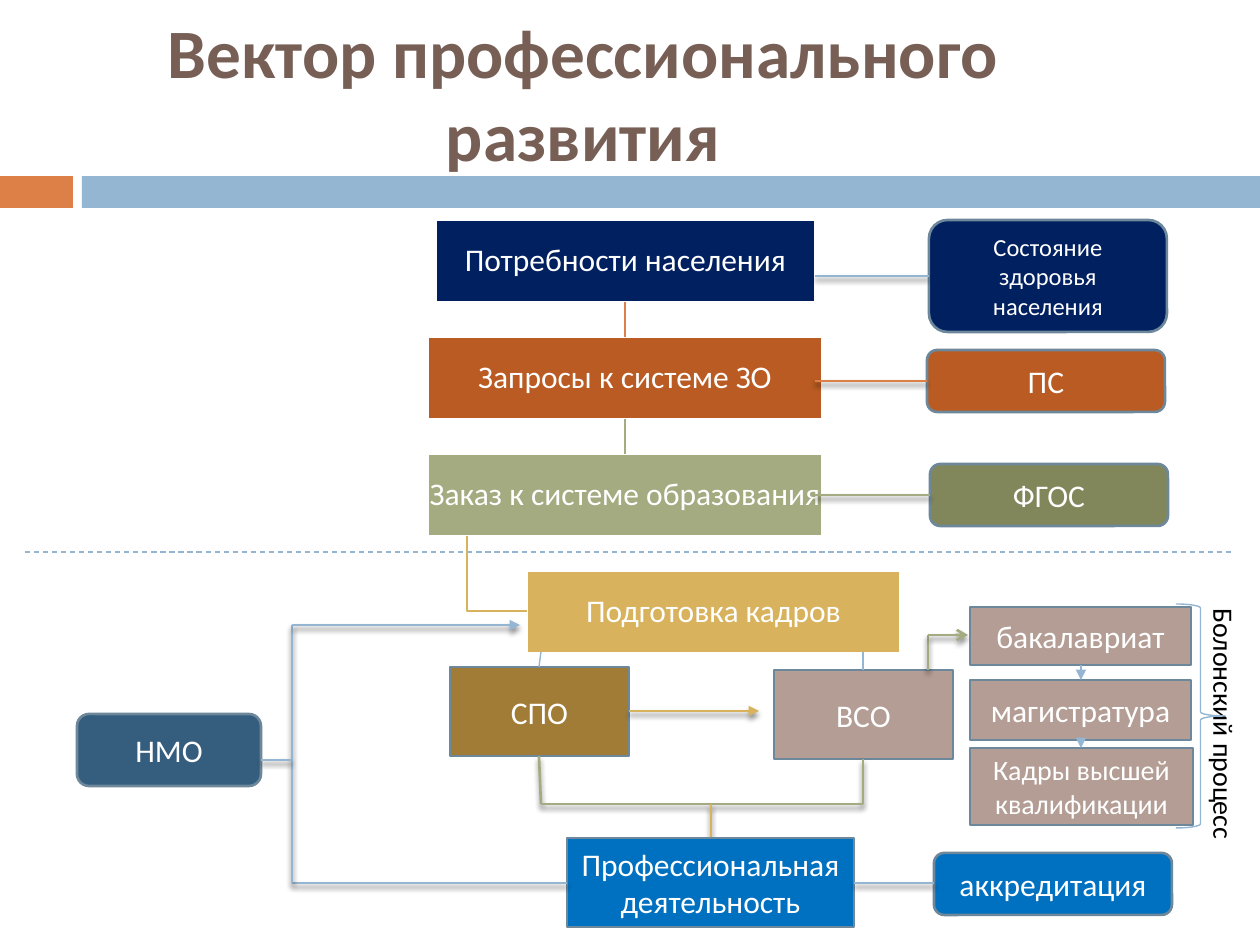
from dataclasses import dataclass

from pptx import Presentation
from pptx.dml.color import RGBColor
from pptx.enum.dml import MSO_LINE
from pptx.enum.shapes import MSO_CONNECTOR, MSO_SHAPE
from pptx.enum.text import MSO_ANCHOR, PP_ALIGN
from pptx.oxml.ns import qn
from pptx.oxml.xmlchemy import OxmlElement
from pptx.util import Pt

RECT = MSO_SHAPE.RECTANGLE
ROUNDED = MSO_SHAPE.ROUNDED_RECTANGLE
BRACE = MSO_SHAPE.RIGHT_BRACE
STRAIGHT = MSO_CONNECTOR.STRAIGHT
DASH = MSO_LINE.DASH
MIDDLE = MSO_ANCHOR.MIDDLE
CENTER = PP_ALIGN.CENTER

WHITE = RGBColor(0xFF, 0xFF, 0xFF)
BLACK = RGBColor(0x00, 0x00, 0x00)
BROWN = RGBColor(0x77, 0x5F, 0x55)
ORANGE = RGBColor(0xDD, 0x80, 0x47)
RUST = RGBColor(0xB9, 0x5B, 0x22)
SKY = RGBColor(0x94, 0xB6, 0xD2)
NAVY = RGBColor(0x00, 0x20, 0x60)
SAGE = RGBColor(0xA5, 0xAB, 0x81)
OLIVE = RGBColor(0x81, 0x87, 0x5A)
GOLD = RGBColor(0xD8, 0xB2, 0x5C)
BRONZE = RGBColor(0xA1, 0x7C, 0x36)
MAUVE = RGBColor(0xB3, 0x9D, 0x94)
BLUE = RGBColor(0x00, 0x70, 0xC0)
STEEL = RGBColor(0x35, 0x5D, 0x7E)
OUTLINE = RGBColor(0x6D, 0x87, 0x9B)

FONT = "Calibri"
SCALE = 914400 / 126
THIN = 0.79
THICK = 1.5


def px(length):
    return round(length * SCALE)


@dataclass
class Box:
    left: int
    top: int
    width: int
    height: int

    def inside(self, x, y, width, height):
        return Box(self.left + x, self.top + y, width, height)

    def point(self, x, y):
        return px(self.left + x), px(self.top + y)

    def emu(self):
        return [px(side) for side in (self.left, self.top, self.width, self.height)]


def write(shape, text, size=18, color=WHITE, bold=False, wrap=True, inset=None, spacing=None):
    frame = shape.text_frame
    frame.word_wrap = wrap
    frame.vertical_anchor = MIDDLE
    if inset is not None:
        frame.margin_left = frame.margin_right = px(inset)
        frame.margin_top = frame.margin_bottom = px(inset)
    paragraph = frame.paragraphs[0]
    paragraph.alignment = CENTER
    paragraph.line_spacing = spacing
    run = paragraph.add_run()
    run.text = text
    run.font.name = FONT
    run.font.size = Pt(size)
    run.font.bold = bold
    run.font.color.rgb = color


def block(slide, box, fill=None, kind=RECT, line=OUTLINE, weight=THICK, text=None, **text_format):
    shape = slide.shapes.add_shape(kind, *box.emu())
    shape.shadow.inherit = False
    if fill is None:
        shape.fill.background()
    else:
        shape.fill.solid()
        shape.fill.fore_color.rgb = fill
    if line is None:
        shape.line.fill.background()
    else:
        shape.line.color.rgb = line
        shape.line.width = Pt(weight)
    if text:
        write(shape, text, **text_format)


def add_child(parent, tag, **attributes):
    child = OxmlElement(tag)
    for name, value in attributes.items():
        child.set(name, value)
    parent.append(child)
    return child


def link(slide, box, start, end, color=SKY, weight=THICK, head=None, dash=None, shadow=True):
    connector = slide.shapes.add_connector(STRAIGHT, *box.point(*start), *box.point(*end))
    connector.line.color.rgb = color
    connector.line.width = Pt(weight)
    if dash:
        connector.line.dash_style = dash
    properties = connector.element.spPr
    if head:
        add_child(properties.find(qn("a:ln")), "a:tailEnd", type=head)
    effects = add_child(properties, "a:effectLst")
    if shadow:
        cast = add_child(effects, "a:outerShdw", blurRad="38100", dist="30480",
                         dir="5400000", rotWithShape="0")
        shade = add_child(cast, "a:srgbClr", val="000000")
        add_child(shade, "a:alpha", val="45000")


def header(slide, box):
    block(slide, box.inside(0, 176, 73, 32), ORANGE, line=None)
    block(slide, box.inside(82, 176, 1178, 32), SKY, line=None)
    title = slide.shapes.add_textbox(*box.inside(21, 24, 1124, 136).emu())
    write(title, "Вектор профессионального развития", size=39.6, color=BROWN, bold=True)


def stages(slide, box):
    rows = [
        ("Потребности населения", 8, 379, NAVY),
        ("Запросы к системе ЗО", 0, 394, RUST),
        ("Заказ к системе образования", 0, 394, SAGE),
        ("Подготовка кадров", 99, 373, GOLD),
    ]
    pitch, height = 117, 82
    for index, (label, x, width, fill) in enumerate(rows):
        block(slide, box.inside(x, index * pitch, width, height), fill, line=WHITE,
              text=label, wrap=False, inset=1, spacing=0.9)
    for index, color in enumerate((ORANGE, SAGE)):
        link(slide, box, (197, index * pitch + height), (197, (index + 1) * pitch),
             color, shadow=False)
    elbow = slide.shapes.build_freeform(*box.point(39, 2 * pitch + height))
    elbow.add_line_segments([box.point(39, 391), box.point(99, 391)], close=False)
    bend = elbow.convert_to_shape()
    bend.shadow.inherit = False
    bend.fill.background()
    bend.line.color.rgb = GOLD
    bend.line.width = Pt(THICK)


def standards(slide, box):
    rows = [
        ("Состояние здоровья населения", 110, 0, 112, 14, NAVY, SKY, 56, 0),
        ("ПС", 108, 130, 62, 18, RUST, ORANGE, 161, 0),
        ("ФГОС", 111, 244, 62, 18, OLIVE, SAGE, 275, 0),
    ]
    for label, x, y, height, size, fill, color, link_y, link_x in rows:
        block(slide, box.inside(x, y, 238, height), fill, ROUNDED, text=label, size=size)
        link(slide, box, (x, link_y), (link_x - 4, link_y), color)


def training(slide, box):
    block(slide, box.inside(0, 15, 179, 89), BRONZE, text="СПО")
    block(slide, box.inside(324, 18, 179, 89), MAUVE, text="ВСО")
    link(slide, box, (91, 0), (89, 15), weight=THIN, shadow=False)
    link(slide, box, (413, 0), (413, 18), weight=THIN, shadow=False)
    link(slide, box, (179, 59), (309, 59), GOLD, head="triangle")
    link(slide, box, (478, -17), (478, 18), SAGE)
    link(slide, box, (478, -17), (518, -17), SAGE, head="arrow")
    link(slide, box, (89, 104), (91, 152), SAGE)
    link(slide, box, (413, 107), (413, 152), SAGE)
    link(slide, box, (91, 152), (413, 152), SAGE)
    link(slide, box, (261, 152), (261, 186), GOLD)


def degrees(slide, box):
    levels = [
        ("бакалавриат", 3, 221, 58, 18),
        ("магистратура", 76, 221, 60, 18),
        ("Кадры высшей квалификации", 144, 223, 77, 16),
    ]
    for label, y, width, height, size in levels:
        block(slide, box.inside(0, y, width, height), MAUVE, text=label, size=size)
    for upper, lower in zip(levels, levels[1:]):
        link(slide, box, (111, upper[1] + upper[3]), (111, lower[1]),
             weight=THIN, head="triangle", shadow=False)
    process = slide.shapes.add_textbox(*box.inside(223, -22, 63, 284).emu())
    write(process, "Болонский процесс", size=16, color=BLACK)
    process.element.txBody.find(qn("a:bodyPr")).set("vert", "vert")
    block(slide, box.inside(206, 0, 49, 224), kind=BRACE, line=SKY, weight=THIN)


def practice(slide, box):
    block(slide, box.inside(490, 213, 287, 89), BLUE, text="Профессиональная деятельность")
    block(slide, box.inside(857, 228, 238, 62), BLUE, ROUNDED, text="аккредитация")
    block(slide, box.inside(0, 89, 184, 72), STEEL, ROUNDED, text="НМО")
    link(slide, box, (857, 258), (777, 258))
    link(slide, box, (490, 258), (215, 258))
    link(slide, box, (215, 258), (215, 0))
    link(slide, box, (215, 0), (443, 0), head="triangle")
    link(slide, box, (184, 135), (215, 135))


def main():
    deck = Presentation()
    deck.slide_width, deck.slide_height = px(1260), px(945)
    slide = deck.slides.add_slide(deck.slide_layouts[6])
    header(slide, Box(0, 0, 1260, 208))
    stages(slide, Box(428, 220, 472, 433))
    standards(slide, Box(819, 220, 350, 306))
    link(slide, Box(25, 552, 1209, 0), (0, 0), (1209, 0), weight=0.75, dash=DASH, shadow=False)
    training(slide, Box(450, 652, 518, 186))
    degrees(slide, Box(970, 604, 286, 224))
    practice(slide, Box(77, 625, 1095, 302))
    deck.save("out.pptx")


if __name__ == "__main__":
    main()
